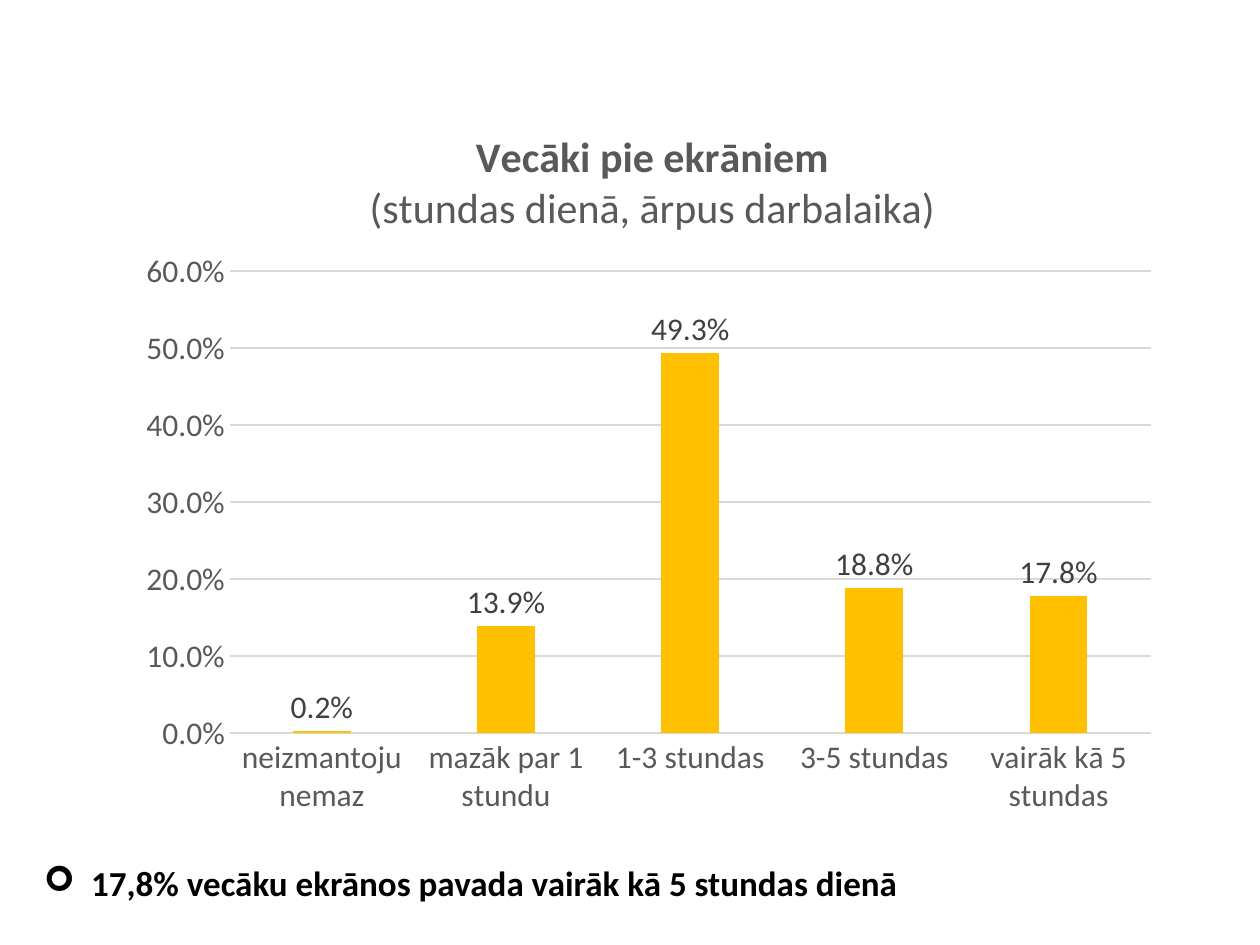
from lxml import etree
from pptx import Presentation
from pptx.chart import data
from pptx.dml import color
from pptx.enum import chart as kinds, text
from pptx.oxml import ns
from pptx.util import Pt

HUES = {"bar": "FFC000", "axis": "595959", "grid": "D9D9D9",
        "label": "404040", "text": "000000"}


def hue(name):
    return color.RGBColor.from_string(HUES[name])


def style(font, size=18, tone="axis", bold=False):
    font.name = "Calibri"
    font.size = Pt(size)
    font.bold = bold
    font.color.rgb = hue(tone)


def write(para, words, **form):
    run = para.add_run()
    run.text = words
    style(run.font, **form)


def rule(line):
    line.color.rgb = hue("grid")
    line.width = Pt(0.75)


def place(node, **spots):
    frame = node.find(ns.qn("c:layout"))
    if frame is None:
        frame = etree.Element(ns.qn("c:layout"))
        node.insert(0, frame)
    man = etree.SubElement(frame, ns.qn("c:manualLayout"))
    if "w" in spots:
        etree.SubElement(man, ns.qn("c:layoutTarget"), val="inner")
    for side in "xy":
        etree.SubElement(man, ns.qn(f"c:{side}Mode"), val="edge")
    for key, spot in spots.items():
        etree.SubElement(man, ns.qn(f"c:{key}"), val=str(spot))


class Deck:
    def __init__(self, wide, high):
        self.file = Presentation()
        self.file.slide_width, self.file.slide_height = Pt(wide), Pt(high)
        self.slide = self.file.slides.add_slide(self.file.slide_layouts[6])

    def chart(self, box, heads, cats, vals):
        src = data.CategoryChartData(number_format="0.0%")
        src.categories = cats
        src.add_series("Series 1", vals)
        graph = self.slide.shapes.add_chart(
            kinds.XL_CHART_TYPE.COLUMN_CLUSTERED, *map(Pt, box), src).chart
        graph.has_legend = False
        style(graph.font, tone="text")
        frame = graph.chart_title.text_frame
        for i, (words, bold) in enumerate(heads):
            para = frame.add_paragraph() if i else frame.paragraphs[0]
            write(para, words, size=24, bold=bold)
        place(graph.chart_title._element, x=0.23, y=0.03)
        place(graph._chartSpace.chart.plotArea, x=0.1, y=0.23, w=0.88, h=0.64)
        for axis in (graph.category_axis, graph.value_axis):
            axis.major_tick_mark = kinds.XL_TICK_MARK.NONE
            axis.minor_tick_mark = kinds.XL_TICK_MARK.NONE
            style(axis.tick_labels.font)
        rule(graph.category_axis.format.line)
        axis = graph.value_axis
        axis.minimum_scale, axis.maximum_scale, axis.major_unit = 0, 0.6, 0.1
        axis.format.line.fill.background()
        axis.tick_labels.number_format = "0.0%"
        axis.tick_labels.number_format_is_linked = False
        rule(axis.major_gridlines.format.line)
        plot = graph.plots[0]
        plot.gap_width = 219
        plot.vary_by_categories = False
        bars = plot.series[0]
        bars.format.fill.solid()
        bars.format.fill.fore_color.rgb = hue("bar")
        tags = bars.data_labels
        tags.show_value = True
        tags.number_format = "0.0%"
        tags.number_format_is_linked = False
        tags.position = kinds.XL_LABEL_POSITION.OUTSIDE_END
        style(tags.font, tone="label")

    def bullet(self, box, words, **form):
        frame = self.slide.shapes.add_textbox(*map(Pt, box)).text_frame
        frame.word_wrap = True
        frame.auto_size = text.MSO_AUTO_SIZE.SHAPE_TO_FIT_TEXT
        para = frame.paragraphs[0]
        write(para, words, **form)
        props = para._p.get_or_add_pPr()
        props.set("marL", str(Pt(27)))
        props.set("indent", str(-Pt(27)))
        etree.SubElement(props, ns.qn("a:buFont"), typeface="Wingdings")
        etree.SubElement(props, ns.qn("a:buChar"), char="➢")


def main():
    deck = Deck(720, 540)
    deck.chart(
        (71.5, 60, 598, 412.5),
        [("Vecāki pie ekrāniem", True),
         ("(stundas dienā, ārpus darbalaika)", False)],
        ["neizmantoju nemaz", "mazāk par 1 stundu", "1-3 stundas",
         "3-5 stundas", "vairāk kā 5 stundas"],
        [0.002, 0.139, 0.493, 0.188, 0.178])
    deck.bullet((18, 489, 702, 31.5),
                "17,8% vecāku ekrānos pavada vairāk kā 5 stundas dienā",
                size=20, tone="text", bold=True)
    deck.file.save("out.pptx")


if __name__ == "__main__":
    main()
